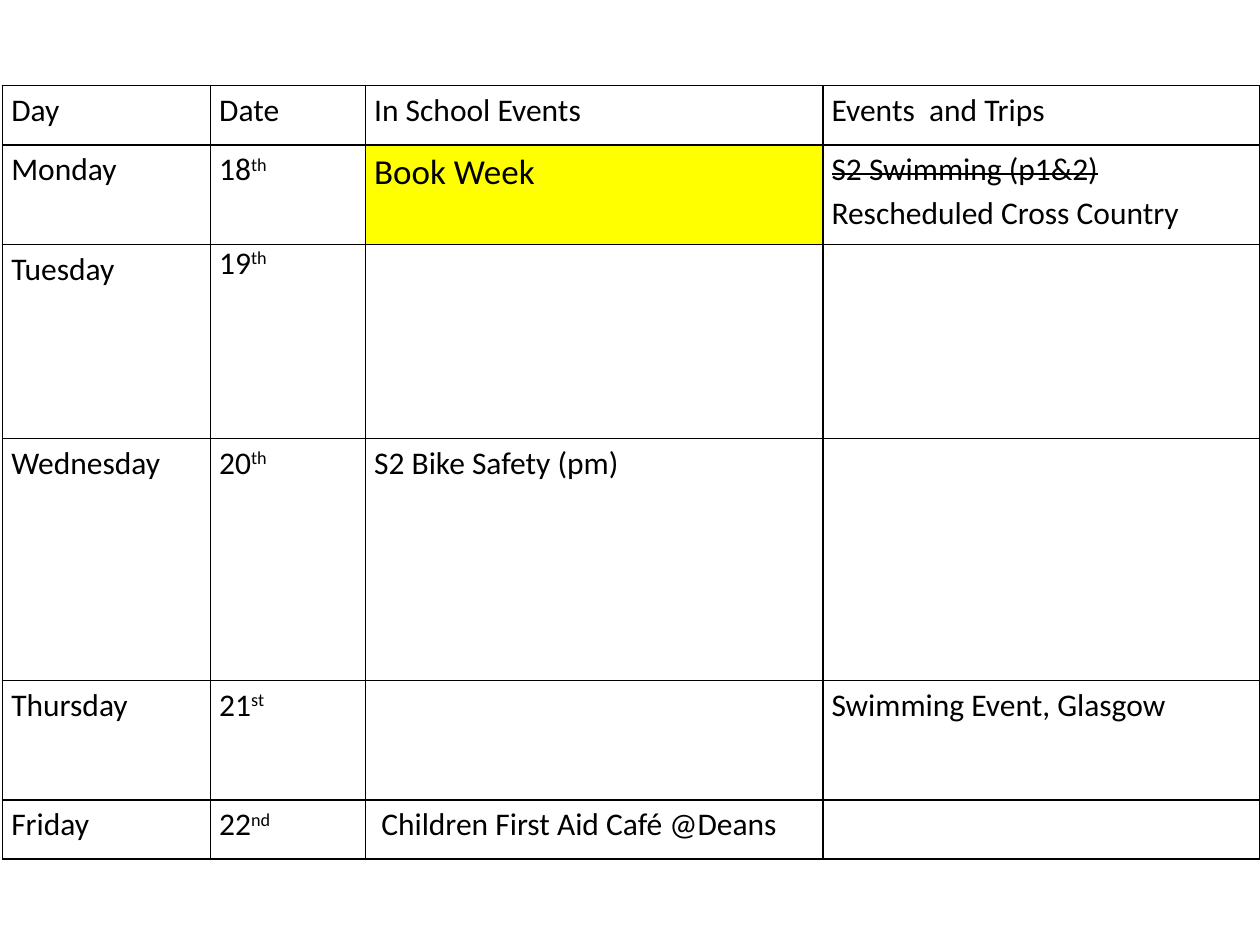
from pptx import Presentation
from pptx import util as u
from pptx.dml.color import RGBColor
from pptx.oxml import parse_xml
from pptx.oxml.ns import nsdecls

COLS = [1.65, 1.23, 3.63, 3.47]
ROWS = [0.47, 0.79, 1.54, 1.92, 0.95, 0.47]
HEADINGS = ["Day", "Date", "In School Events", "Events  and Trips"]
DAYS = [
    ("Monday", "18", "th", "Book Week", ["S2 Swimming (p1&2)", "Rescheduled Cross Country"]),
    ("Tuesday", "19", "th", "", []),
    ("Wednesday", "20", "th", "S2 Bike Safety (pm)", []),
    ("Thursday", "21", "st", "", ["Swimming Event, Glasgow"]),
    ("Friday", "22", "nd", " Children First Aid Café @Deans", []),
]
CANCELLED = "S2 Swimming (p1&2)"
HIGHLIGHT = "Book Week"


def rgb(value):
    return RGBColor.from_string(value)


def add_run(p, content, size=18, **attributes):
    r = p.add_run()
    r.text = content
    r.font.name = "Calibri"
    r.font.size = u.Pt(size)
    r.font.color.rgb = rgb("000000")
    for name, value in attributes.items():
        r.font._element.set(name, value)


def style_cell(cell, fill="FFFFFF"):
    cell.margin_left = cell.margin_right = u.Inches(0.07)
    cell.margin_top = cell.margin_bottom = 0
    tc_pr = cell._tc.get_or_add_tcPr()
    for side in "LRTB":
        tc_pr.append(parse_xml(
            f'<a:ln{side} {nsdecls("a")} w="12700"><a:solidFill>'
            f'<a:srgbClr val="000000"/></a:solidFill></a:ln{side}>'))
    cell.fill.solid()
    cell.fill.fore_color.rgb = rgb(fill)


def write_lines(cell, lines, suffix="", spacing=1.15):
    tf = cell.text_frame
    for i, line in enumerate(lines):
        p = tf.add_paragraph() if i else tf.paragraphs[0]
        p.line_spacing = spacing
        size = 20 if line == HIGHLIGHT else 18
        if line == CANCELLED:
            add_run(p, line, size, strike="sngStrike")
        else:
            add_run(p, line, size)
        if suffix:
            add_run(p, suffix, size, baseline="30000")


def add_week_table(s, left, top, width, height):
    table = s.shapes.add_table(
        len(ROWS), len(COLS), u.Inches(left), u.Inches(top),
        u.Inches(width), u.Inches(height)).table
    table.first_row = table.horz_banding = False
    for column, size in zip(table.columns, COLS):
        column.width = u.Inches(size)
    for row, size in zip(table.rows, ROWS):
        row.height = u.Inches(size)

    for cell, heading in zip(table.rows[0].cells, HEADINGS):
        style_cell(cell)
        write_lines(cell, [heading])

    for i, (day, date, suffix, event, trips) in enumerate(DAYS, 1):
        day_cell, date_cell, event_cell, trip_cell = table.rows[i].cells
        for cell in (day_cell, date_cell, trip_cell):
            style_cell(cell)
        style_cell(event_cell, "FFFF00" if event == HIGHLIGHT else "FFFFFF")
        write_lines(day_cell, [day])
        write_lines(date_cell, [date], suffix, 1.0 if day == "Tuesday" else 1.15)
        if event:
            write_lines(event_cell, [event])
        write_lines(trip_cell, trips)


def main():
    prs = Presentation()
    prs.slide_width, prs.slide_height = u.Inches(10), u.Inches(7.5)
    s = prs.slides.add_slide(prs.slide_layouts[6])
    add_week_table(s, 0.02, 0.68, sum(COLS), sum(ROWS))
    prs.save("out.pptx")


if __name__ == "__main__":
    main()
